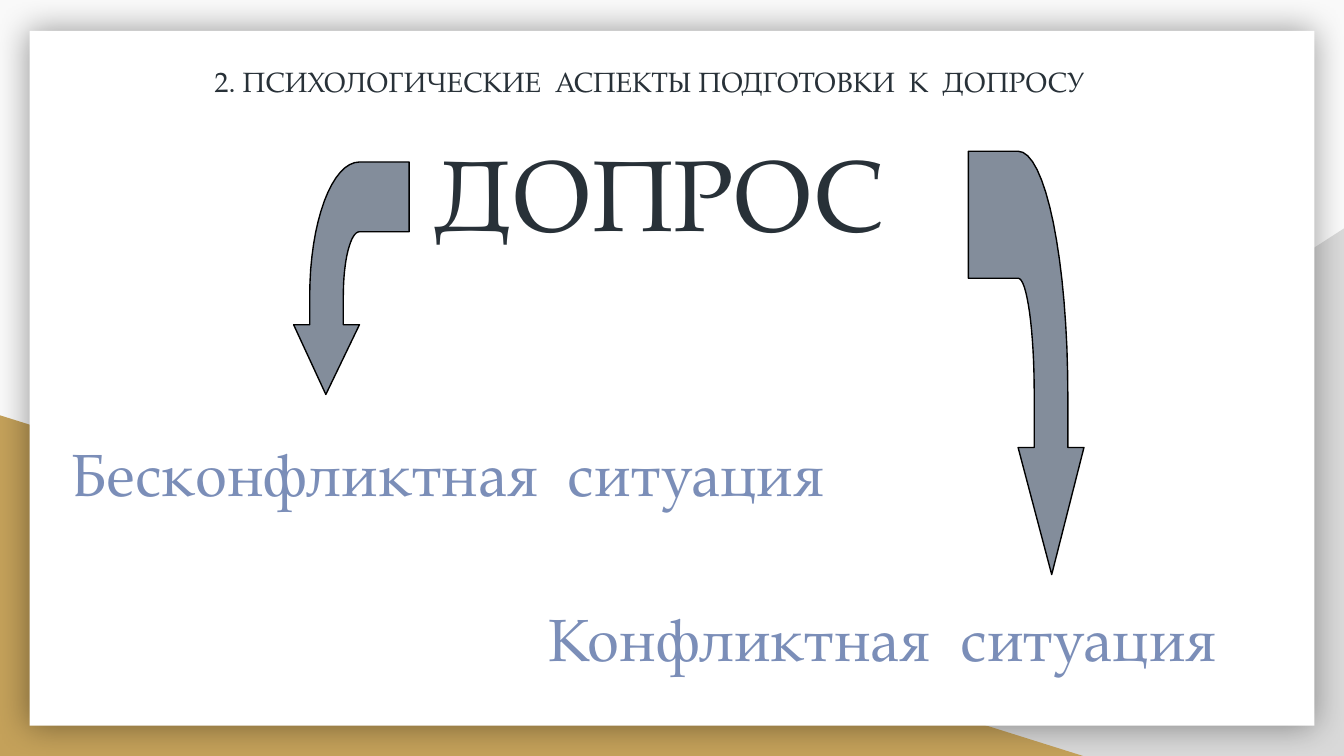
"""Build the slide on the two kinds of interrogation situation."""
from math import cos, pi, sin

from lxml.etree import fromstring
from pptx import Presentation
from pptx.dml.color import RGBColor
from pptx.enum.shapes import MSO_SHAPE
from pptx.enum.text import MSO_ANCHOR, MSO_AUTO_SIZE, PP_ALIGN
from pptx.util import Inches, Pt

WIDE = 10
HIGH = WIDE * 9 / 16
FONT = "TeX Gyre Pagella"
HEX = {"back": "F9F9F9", "grey": "D9D9D9", "gold": "C4A15A", "card": "FFFFFF",
       "ink": "283138", "blue": "7B8EB8", "arrow": "838D9B", "edge": "000000"}

TITLE = ("2. ПСИХОЛОГИЧЕСКИЕ  АСПЕКТЫ ПОДГОТОВКИ  К  ДОПРОСУ", (1.01, 0.38, 7.65, 0.57))
HEAD = ("ДОПРОС ", (0.81, 0.92, 8.38, 1))
CASES = [("Бесконфликтная  ситуация", (0.48, 3.2, 5.87, 0.64)),
         ("Конфликтная  ситуация", (4.03, 4.43, 5.22, 0.64))]
WEDGES = [("grey", [(WIDE, HIGH), (3.92, HIGH), (WIDE, 1.7)]),
          ("gold", [(0, HIGH), (8.06, HIGH), (0, 3.09)])]
CARD = (0.22, 0.23, 9.56, 5.17)
ARROWS = [(1.75, 1.64, 1.73, -1), (6.06, 2.27, 3.15, 1)]
SPAN = 0.86

SHADOW = (
    '<a:effectLst xmlns:a="http://schemas.openxmlformats.org/drawingml/2006/main">'
    '<a:outerShdw blurRad="228600" dist="0" dir="0" algn="ctr" rotWithShape="0">'
    '<a:srgbClr val="000000"><a:alpha val="40000"/></a:srgbClr>'
    '</a:outerShdw></a:effectLst>')


def rgb(name):
    return RGBColor.from_string(HEX[name])


def paint(shape, fill, line=None):
    shape.shadow.inherit = False
    shape.fill.solid()
    shape.fill.fore_color.rgb = rgb(fill)
    if line:
        shape.line.color.rgb = rgb(line)
        shape.line.width = Pt(0.75)
    else:
        shape.line.fill.background()


def outline(shapes, points):
    ends = [(Inches(x), Inches(y)) for x, y in points]
    pen = shapes.build_freeform(*ends[0], scale=1.0)
    pen.add_line_segments(ends[1:], close=True)
    return pen.convert_to_shape()


def bend(left, right, top, low):
    turns = [pi / 2 * step / 16 for step in range(17)]
    return [(left + (right - left) * sin(t), low - (low - top) * cos(t)) for t in turns]


def arrow(shapes, left, top, size, side):
    path = [(0, 0), *bend(0.37, 0.74, 0, 0.575 * size),
            (0.74, 0.7 * size), (SPAN, 0.7 * size), (0.62, size),
            (0.37, 0.7 * size), (0.49, 0.7 * size),
            *reversed(bend(0.37, 0.49, 0.3 * size, 0.575 * size)), (0, 0.3 * size)]
    shape = outline(shapes, [(left + (y if side > 0 else size - y), top + SPAN - x)
                             for x, y in path])
    shape.rotation = 90 * side % 360
    paint(shape, "arrow", "edge")


def write(shape, text, size, color, align, inset=0.05, wrap=True, anchor=MSO_ANCHOR.TOP,
          fit=MSO_AUTO_SIZE.SHAPE_TO_FIT_TEXT):
    frame = shape.text_frame
    frame.text = text
    frame.word_wrap = wrap
    frame.auto_size = fit
    frame.vertical_anchor = anchor
    frame.margin_left = frame.margin_right = Inches(inset)
    frame.margin_top = frame.margin_bottom = Inches(inset)
    para = frame.paragraphs[0]
    para.alignment = align
    para.font.name = FONT
    para.font.size = Pt(size)
    para.font.color.rgb = rgb(color)


def main():
    deck = Presentation()
    deck.slide_width, deck.slide_height = Inches(WIDE), Inches(HIGH)
    slide = deck.slides.add_slide(deck.slide_layouts[5])
    slide.background.fill.solid()
    slide.background.fill.fore_color.rgb = rgb("back")
    shapes = slide.shapes

    for color, points in WEDGES:
        paint(outline(shapes, points), color)
    card = shapes.add_shape(MSO_SHAPE.RECTANGLE, *map(Inches, CARD))
    paint(card, "card")
    props = card.element.spPr
    props.replace(props[-1], fromstring(SHADOW))

    title = shapes.title
    title.element.getparent().append(title.element)
    text, box = TITLE
    title.left, title.top, title.width, title.height = map(Inches, box)
    write(title, text, 15, "ink", PP_ALIGN.CENTER, inset=0.1, fit=MSO_AUTO_SIZE.NONE)

    text, box = HEAD
    write(shapes.add_textbox(*map(Inches, box)), text, 54, "ink", PP_ALIGN.CENTER,
          anchor=MSO_ANCHOR.MIDDLE)
    for item in ARROWS:
        arrow(shapes, *item)
    for text, box in CASES:
        write(shapes.add_textbox(*map(Inches, box)), text, 32, "blue", PP_ALIGN.LEFT,
              wrap=False)
    deck.save("out.pptx")


if __name__ == "__main__":
    main()
